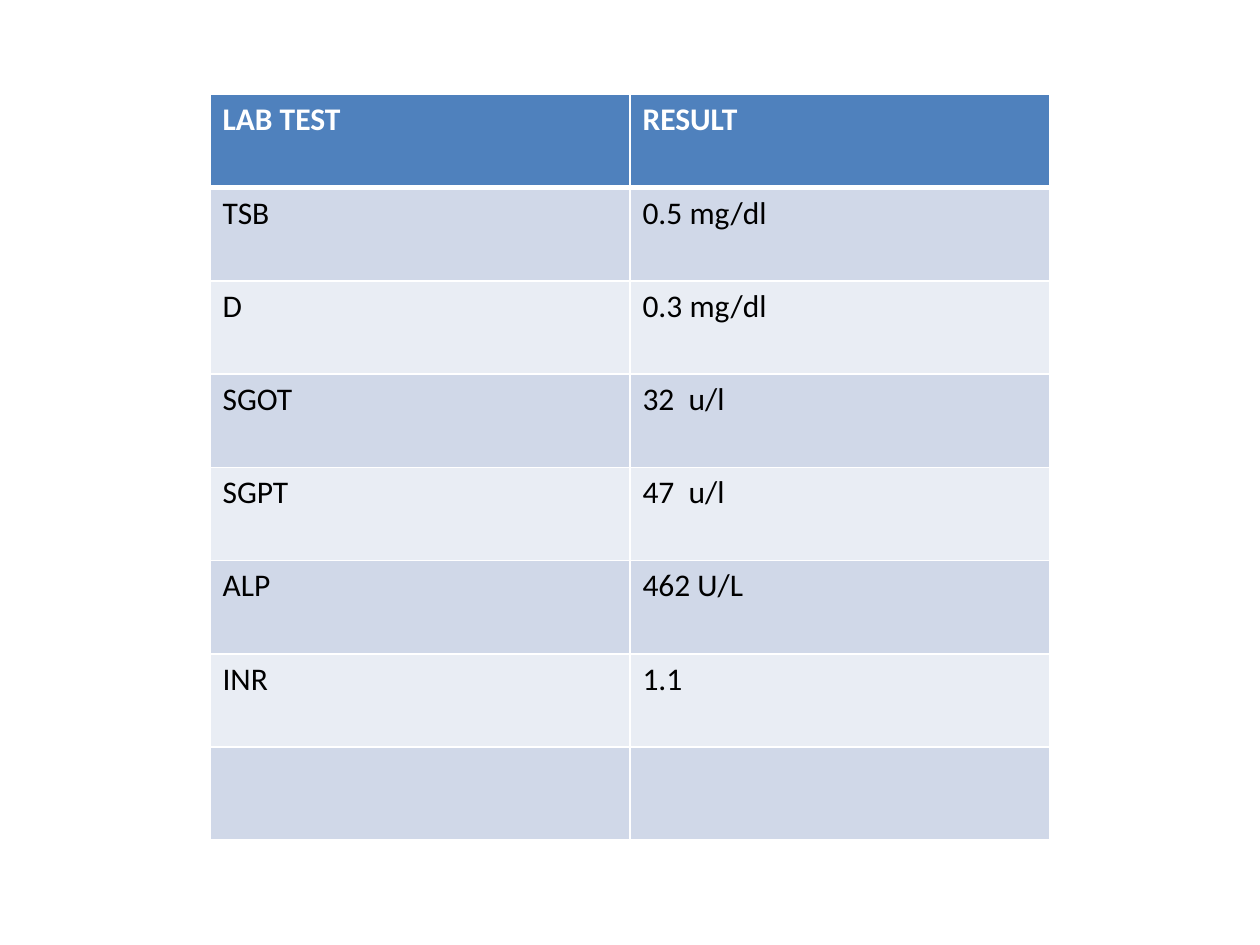
from lxml.etree import SubElement
from pptx import Presentation
from pptx.dml.color import RGBColor
from pptx.oxml.ns import qn
from pptx.util import Inches, Pt

HEADER = ("LAB TEST", "RESULT")
RESULTS = [
    ("TSB", "0.5 mg/dl"),
    ("D", "0.3 mg/dl"),
    ("SGOT", "32  u/l"),
    ("SGPT", "47  u/l"),
    ("ALP", "462 U/L"),
    ("INR", "1.1"),
    ("", ""),
]
HEADER_FILL, BANDS = "4F81BD", ("D0D8E8", "E9EDF4")
WHITE, BLACK = "FFFFFF", "000000"
SLIDE_W, SLIDE_H = 10, 7.5
TABLE_W, ROW_H, TOP = SLIDE_W * 2 / 3, 0.74, SLIDE_H / 10
THIN, THICK = 1, 3


def rgb(value):
    return RGBColor.from_string(value)


def add_borders(cell, widths):
    """Draw white cell edges; widths maps each side (L, R, T, B) to points."""
    properties = cell._tc.get_or_add_tcPr()
    for side, width in widths.items():
        line = SubElement(properties, qn(f"a:ln{side}"), w=str(Pt(width)))
        fill = SubElement(line, qn("a:solidFill"))
        SubElement(fill, qn("a:srgbClr"), val=WHITE)


def fill_cell(cell, text, row):
    is_header = row == 0
    add_borders(cell, {
        "L": THIN,
        "R": THIN,
        "T": THICK if row == 1 else THIN,
        "B": THICK if is_header else THIN,
    })
    cell.fill.solid()
    cell.fill.fore_color.rgb = rgb(HEADER_FILL if is_header else BANDS[(row - 1) % 2])
    paragraph = cell.text_frame.paragraphs[0]
    paragraph.font.size = Pt(18)
    if text:
        run = paragraph.add_run()
        run.text = text
        run.font.name = "Calibri"
        run.font.size = Pt(18)
        run.font.bold = is_header
        run.font.color.rgb = rgb(WHITE if is_header else BLACK)


def main():
    deck = Presentation()
    deck.slide_width, deck.slide_height = Inches(SLIDE_W), Inches(SLIDE_H)
    slide = deck.slides.add_slide(deck.slide_layouts[6])
    rows = [HEADER, *RESULTS]
    lab_table = slide.shapes.add_table(
        len(rows), len(HEADER),
        Inches((SLIDE_W - TABLE_W) / 2), Inches(TOP),
        Inches(TABLE_W), Inches(ROW_H * len(rows)),
    ).table
    for row, texts in enumerate(rows):
        for column, text in enumerate(texts):
            fill_cell(lab_table.cell(row, column), text, row)
    deck.save("out.pptx")


if __name__ == "__main__":
    main()
